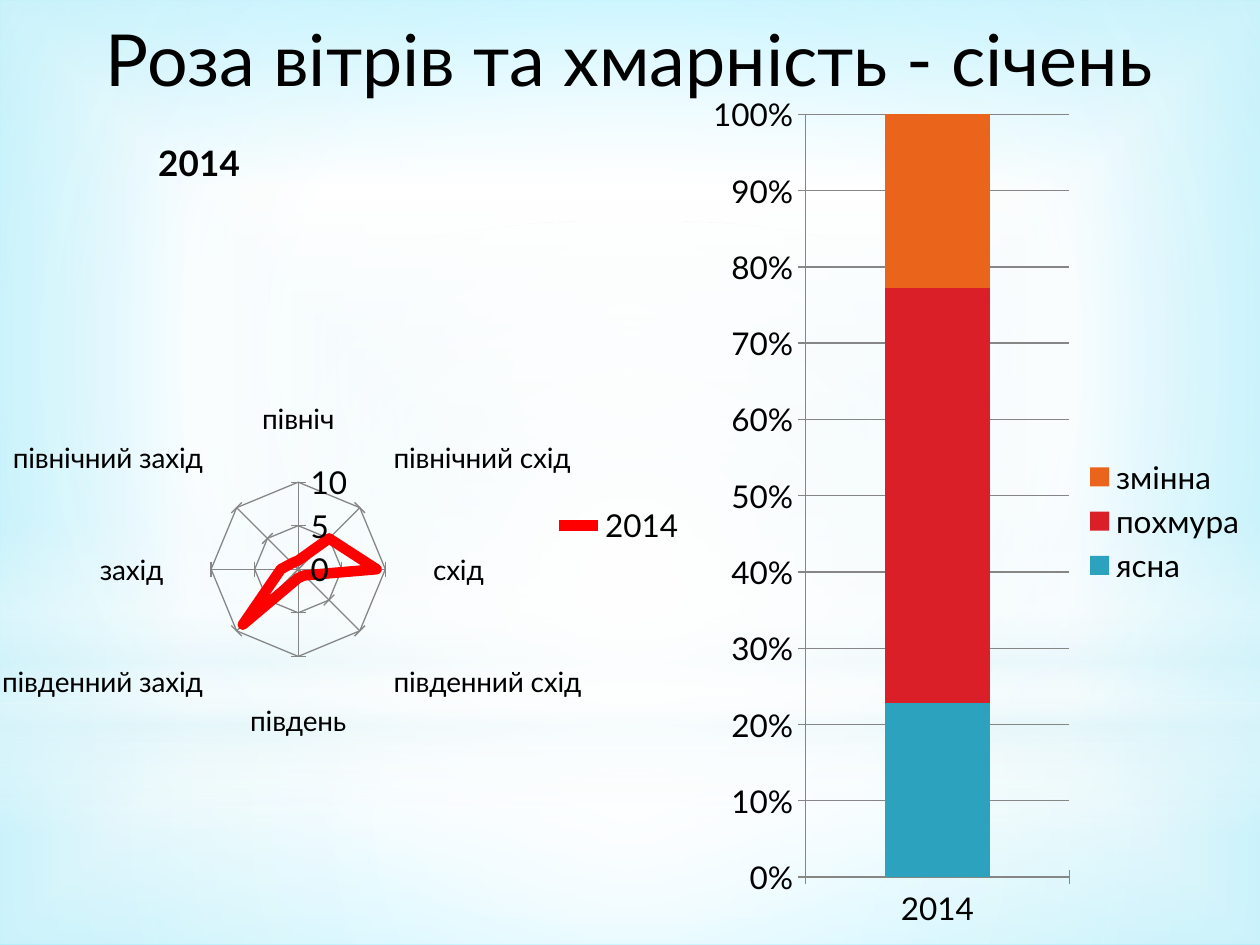
from lxml import etree
from pptx import Presentation
from pptx.chart.data import CategoryChartData
from pptx.dml.color import RGBColor
from pptx.enum.chart import XL_CHART_TYPE, XL_LEGEND_POSITION, XL_MARKER_STYLE, XL_TICK_MARK
from pptx.enum.shapes import MSO_SHAPE
from pptx.enum.text import MSO_ANCHOR, PP_ALIGN
from pptx.oxml.ns import qn
from pptx.util import Pt

RADAR = XL_CHART_TYPE.RADAR
STACK = XL_CHART_TYPE.COLUMN_STACKED_100
RIGHT = XL_LEGEND_POSITION.RIGHT
CROSS = XL_TICK_MARK.CROSS
BARE = XL_MARKER_STYLE.NONE
RECT = MSO_SHAPE.RECTANGLE
OVAL = MSO_SHAPE.OVAL
MIDDLE = MSO_ANCHOR.MIDDLE
CENTER = PP_ALIGN.CENTER

FONT = "Lato"
BLACK = RGBColor(0x00, 0x00, 0x00)
GREY = RGBColor(0x86, 0x86, 0x86)
RED = RGBColor(0xFF, 0x00, 0x00)
WHITE = RGBColor(0xFF, 0xFF, 0xFF)
PALE = RGBColor(0xDE, 0xF5, 0xFA)
MIST = RGBColor(0xCD, 0xEF, 0xF7)
SKY = RGBColor(0x7C, 0xE7, 0xFF)
TEAL = RGBColor(0x2D, 0xA2, 0xBF)
ROSE = RGBColor(0xDA, 0x1F, 0x28)
AMBER = RGBColor(0xEB, 0x64, 0x1B)

WINDS = [("північ", 1), ("північний схід", 5), ("схід", 9), ("південний схід", 1),
         ("південь", 1), ("південний захід", 9), ("захід", 2), ("північний захід", 1)]
CLOUDS = [("ясна", 23, TEAL), ("похмура", 55, ROSE), ("змінна", 23, AMBER)]
GLOWS = [
    (RECT, (0, 402, 720, 138), [(0, WHITE, 91), (37, WHITE, 76), (100, PALE, 79)], "circle"),
    (RECT, (0, 0, 720, 402), [(0, WHITE, 89), (48, WHITE, 62), (100, PALE, 79)], "circle"),
    (RECT, (0, 297, 720, 180), [(0, WHITE, 0), (29, WHITE, 30), (45, PALE, 40),
                                (55, WHITE, 26), (65, PALE, 60), (100, WHITE, 0)], None),
    (OVAL, (0, 126, 720, 402), [(0, WHITE, 100), (56, WHITE, 0)], "circle"),
]


def add(root, tag, **attrs):
    """Append a child element and return it."""
    node = etree.SubElement(root, qn(tag))
    for key, value in attrs.items():
        node.set(key, str(value))
    return node


def blend(fill, root, stops, form):
    """Fill with a gradient of (place, colour, opacity) stops."""
    fill.gradient()
    grad = root.find(".//" + qn("a:gradFill"))
    for node in list(grad):
        grad.remove(node)
    row = add(grad, "a:gsLst")
    for place, tone, alpha in stops:
        stop = add(row, "a:gs", pos=place * 1000)
        add(add(stop, "a:srgbClr", val=tone), "a:alpha", val=alpha * 1000)
    if form:
        mid = add(grad, "a:path", path=form)
        add(mid, "a:fillToRect", l=50000, t=50000, r=50000, b=50000)
    else:
        add(grad, "a:lin", ang=5400000, scaled=0)


def add_glow(slide, form, box, stops, kind):
    """Add a soft shape behind the content."""
    glow = slide.shapes.add_shape(form, *map(Pt, box))
    glow.shadow.inherit = False
    glow.line.fill.background()
    blend(glow.fill, glow._element.spPr, stops, kind)


def add_title(slide, text):
    """Place the title above the glows."""
    title = slide.shapes.title
    title.left, title.top, title.width, title.height = map(Pt, (0, 0, 720, 66))
    slide.shapes._spTree.append(title._element)
    frame = title.text_frame
    frame.vertical_anchor = MIDDLE
    para = frame.paragraphs[0]
    para.alignment = CENTER
    run = para.add_run()
    run.text = text
    set_font(run.font, 41)


def set_font(font, size):
    """Set the common typeface and colour."""
    font.name = FONT
    font.size = Pt(size)
    font.color.rgb = BLACK


def set_spot(root, index, **spots):
    """Give a chart part a manual layout."""
    for node in root.findall(qn("c:layout")):
        root.remove(node)
    spot = etree.Element(qn("c:layout"))
    root.insert(index, spot)
    hand = add(spot, "c:manualLayout")
    if "w" in spots:
        add(hand, "c:layoutTarget", val="inner")
    for key in ("x", "y"):
        add(hand, f"c:{key}Mode", val="edge")
    for key, value in spots.items():
        add(hand, f"c:{key}", val=value)


def add_chart(slide, kind, box, data):
    """Add a chart with shared axis and legend styles."""
    chart = slide.shapes.add_chart(kind, *map(Pt, box), data).chart
    set_font(chart.font, 18)
    chart.has_title = False
    chart.has_legend = True
    chart.legend.position = RIGHT
    chart.legend.include_in_layout = False
    for axis in (chart.category_axis, chart.value_axis):
        axis.major_tick_mark = CROSS
        axis.format.line.color.rgb = GREY
    chart.value_axis.has_major_gridlines = True
    chart.value_axis.major_gridlines.format.line.color.rgb = GREY
    return chart


def add_rose(slide):
    """Add the wind rose."""
    data = CategoryChartData()
    data.categories = [name for name, _ in WINDS]
    data.add_series("2014", [days for _, days in WINDS])
    chart = add_chart(slide, RADAR, (-1.5, 60.5, 401, 479.5), data)
    chart.category_axis.tick_labels.font.size = Pt(16)
    chart.value_axis.maximum_scale = 10
    chart.value_axis.major_unit = 5
    chart.has_title = True
    run = chart.chart_title.text_frame.paragraphs[0].add_run()
    run.text = "2014"
    set_font(run.font, 20)
    run.font.bold = True
    set_spot(chart.chart_title._element, 1, x=0.22, y=0.03)
    wind = chart.plots[0].series[0]
    wind.smooth = False
    wind.marker.style = BARE
    wind.format.line.color.rgb = RED
    wind.format.line.width = Pt(6)


def add_stack(slide):
    """Add the cloud cover column."""
    data = CategoryChartData()
    data.categories = ["2014"]
    for name, days, _ in CLOUDS:
        data.add_series(name, [days])
    chart = add_chart(slide, STACK, (399.5, 54.5, 320.5, 485.5), data)
    labels = chart.value_axis.tick_labels
    labels.number_format = "0%"
    labels.number_format_is_linked = False
    plot = chart.plots[0]
    plot.vary_by_categories = False
    plot.gap_width = 150
    plot.overlap = 100
    for part, (_, _, tone) in zip(plot.series, CLOUDS):
        part.format.fill.solid()
        part.format.fill.fore_color.rgb = tone
    area = chart._chartSpace.find(".//" + qn("c:plotArea"))
    set_spot(area, 0, x=0.19, y=0.02, w=0.47, h=0.9)


def main():
    """Build and save the slide."""
    deck = Presentation()
    deck.slide_width, deck.slide_height = Pt(720), Pt(540)
    slide = deck.slides.add_slide(deck.slide_layouts[5])
    blend(slide.background.fill, slide._element,
          [(0, MIST, 45), (60, WHITE, 100), (100, SKY, 100)], "shape")
    for glow in GLOWS:
        add_glow(slide, *glow)
    add_title(slide, "Роза вітрів та хмарність - січень")
    add_rose(slide)
    add_stack(slide)
    deck.save("out.pptx")


if __name__ == "__main__":
    main()
